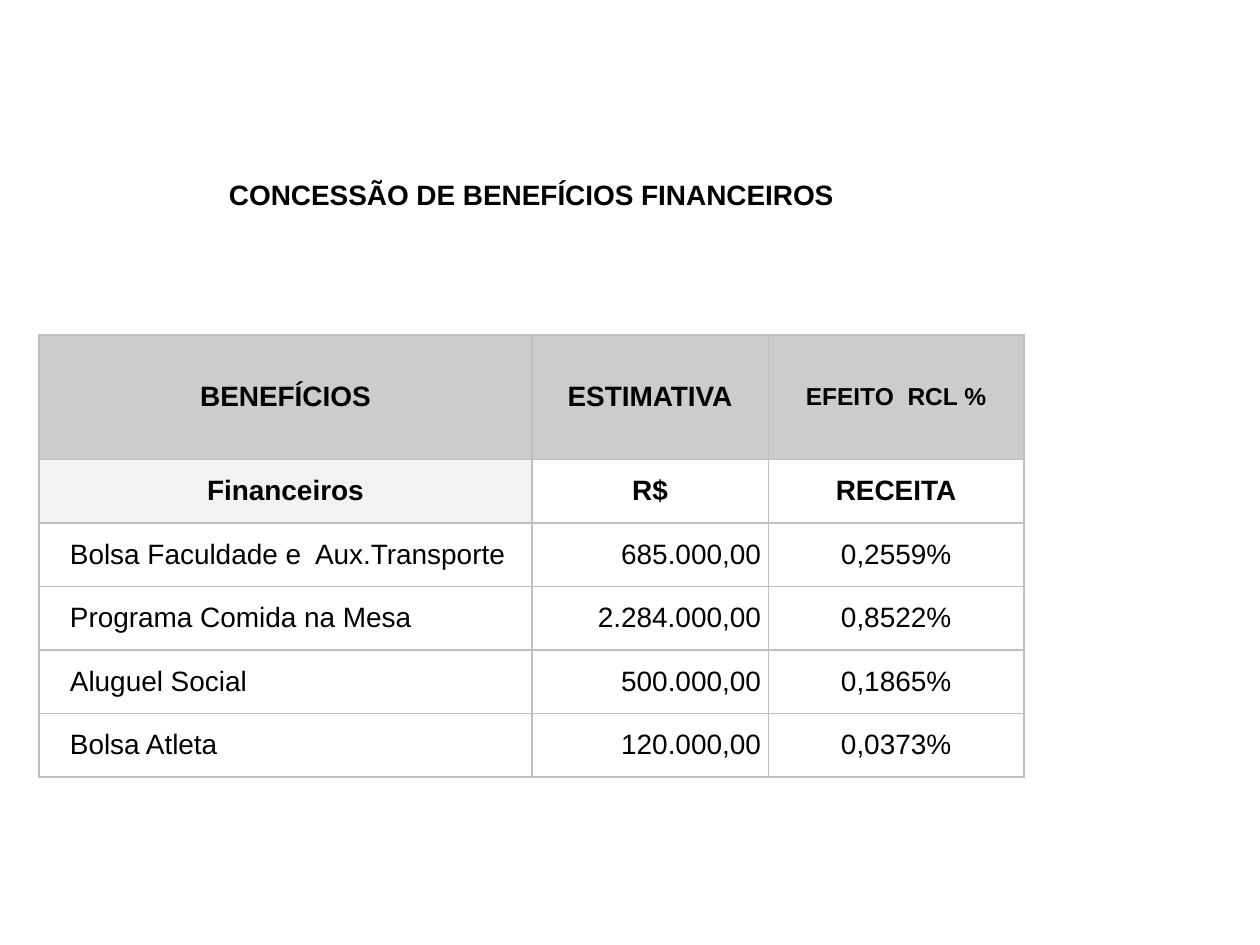
from collections import namedtuple

from lxml import etree
from pptx import Presentation
from pptx import util as u
from pptx.dml import color
from pptx.enum import text
from pptx.oxml import ns

Theme = namedtuple("Theme", "font ink line header subheader paper size small")
theme = Theme(font="Arial", ink="000000", line="BFBFBF", header="CCCCCC",
              subheader="F2F2F2", paper="FFFFFF", size=16, small=14)
LEFT, CENTER, RIGHT = (text.PP_ALIGN.LEFT, text.PP_ALIGN.CENTER,
                       text.PP_ALIGN.RIGHT)


def set_borders(cell, sides):
    """Draw the given sides (of L, R, T, B) and leave the others empty."""
    props = cell._tc.get_or_add_tcPr()
    for side in "LRTB":
        line = etree.SubElement(props, ns.qn(f"a:ln{side}"), w=str(u.Pt(1)))
        if side in sides:
            fill = etree.SubElement(line, ns.qn("a:solidFill"))
            etree.SubElement(fill, ns.qn("a:srgbClr"), val=theme.line)
        else:
            etree.SubElement(line, ns.qn("a:noFill"))


def write(cell, words, align=CENTER, bold=True, size=theme.size):
    para = cell.text_frame.paragraphs[0]
    para.alignment = align
    span = para.add_run()
    span.text = words
    span.font.name = theme.font
    span.font.size = u.Pt(size)
    span.font.bold = bold
    span.font.color.rgb = color.RGBColor.from_string(theme.ink)


deck = Presentation()
deck.slide_width, deck.slide_height = u.Cm(25.4), u.Cm(19.05)
page = deck.slides.add_slide(deck.slide_layouts[6])

# Table grid: title row, three spacer rows, header, subheader, benefits
widths = [9.93, 4.77, 5.15]
heights = [0.74] + [0.81] * 3 + [2.51] + [1.28] * 5
HEADER, SUBHEADER, FIRST_BENEFIT = 4, 5, 6
table = page.shapes.add_table(
    len(heights), len(widths), u.Cm(0.79), u.Cm(3.58),
    u.Cm(sum(widths)), u.Cm(sum(heights))).table
table.first_row = table.horz_banding = False
for column, width in zip(table.columns, widths):
    column.width = u.Cm(width)
for row, height in zip(table.rows, heights):
    row.height = u.Cm(height)

# Cell margins, borders and fills
fills = {(HEADER, 0): theme.header, (HEADER, 1): theme.header,
         (HEADER, 2): theme.header, (SUBHEADER, 0): theme.subheader,
         (SUBHEADER, 1): theme.paper}
for r, row in enumerate(table.rows):
    for c, cell in enumerate(row.cells):
        cell.margin_left = cell.margin_right = 0
        cell.margin_top = cell.margin_bottom = 0
        cell.vertical_anchor = text.MSO_ANCHOR.MIDDLE
        set_borders(cell, "LRTB" if r >= HEADER else
                    "B" if r == HEADER - 1 else "")
        if (r, c) in fills:
            cell.fill.solid()
            cell.fill.fore_color.rgb = color.RGBColor.from_string(fills[r, c])
        else:
            cell.fill.background()

# Title across the top row
table.cell(0, 0).merge(table.cell(0, 2))
write(table.cell(0, 0), "CONCESSÃO DE BENEFÍCIOS FINANCEIROS")

# Headings
for c, (heading, size) in enumerate([("BENEFÍCIOS", theme.size),
                                     ("ESTIMATIVA", theme.size),
                                     ("EFEITO  RCL %", theme.small)]):
    write(table.cell(HEADER, c), heading, size=size)
for c, heading in enumerate(["Financeiros", "R$", "RECEITA"]):
    write(table.cell(SUBHEADER, c), heading)

# Benefits
benefits = [
    ("Bolsa Faculdade e  Aux.Transporte", "685.000,00", "0,2559%"),
    ("Programa Comida na Mesa", "2.284.000,00", "0,8522%"),
    ("Aluguel Social", "500.000,00", "0,1865%"),
    ("Bolsa Atleta", "120.000,00", "0,0373%"),
]
for r, benefit in enumerate(benefits, FIRST_BENEFIT):
    for c, (words, align) in enumerate(zip(benefit, (LEFT, RIGHT, CENTER))):
        write(table.cell(r, c), words, align, bold=False)
    table.cell(r, 0).margin_left = u.Cm(0.62)
    table.cell(r, 1).margin_right = u.Cm(0.15)

deck.save("out.pptx")
